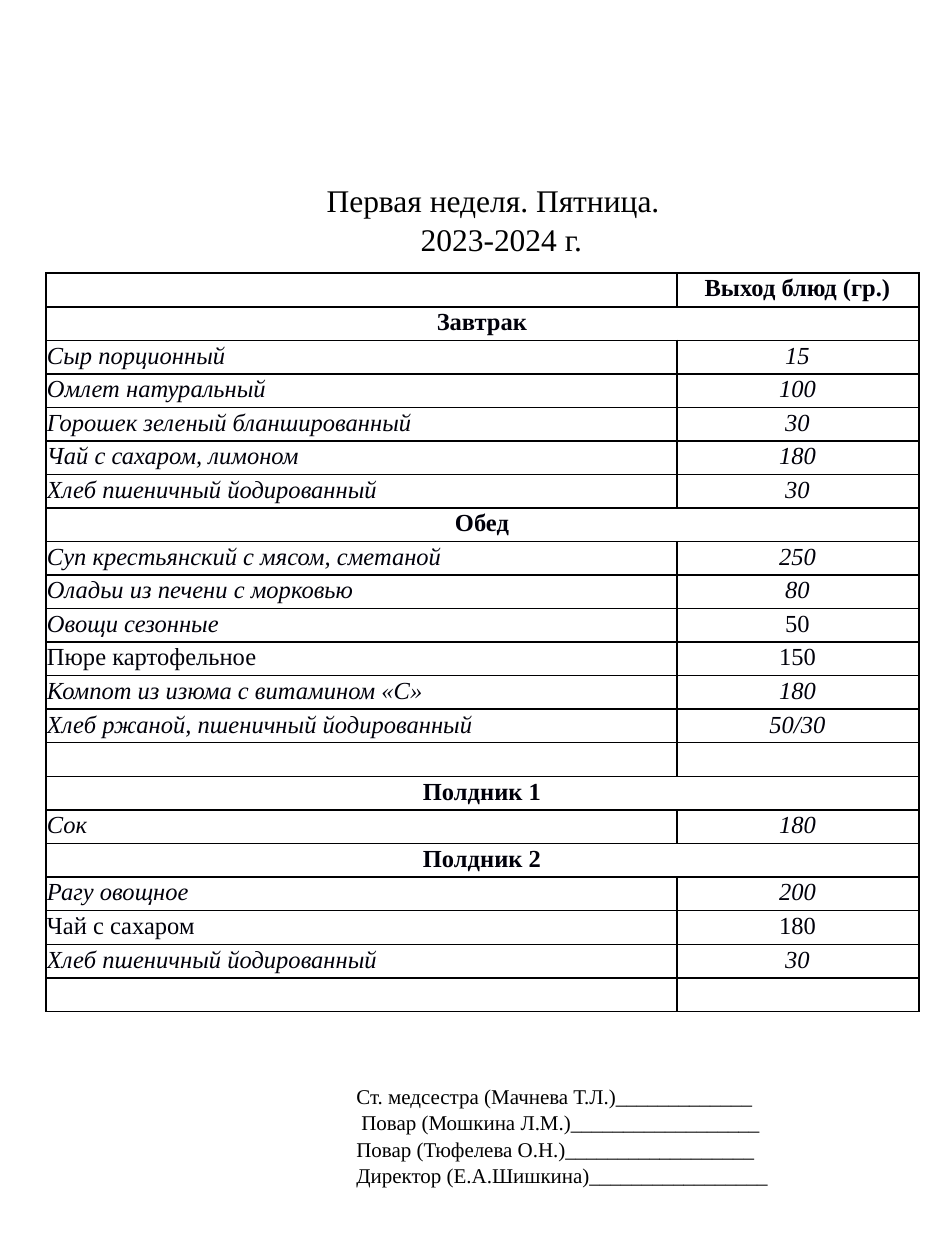
from lxml import etree
from pptx import Presentation
from pptx import util as u
from pptx.dml.color import RGBColor
from pptx.enum import text
from pptx.oxml.ns import qn

PX = 914400 // 126
FONT = "Times New Roman"
BLACK = RGBColor(0, 0, 0)
INK = RGBColor(0, 0, 0x0A)
EDGE = RGBColor(0, 0, 1)

# (text, indent in px)
TITLE = [("Первая неделя. Пятница.", 0), ("2023-2024 г.", 94)]
SIGNS = [
    ("Ст. медсестра (Мачнева Т.Л.)_____________", 0),
    ("Повар (Мошкина Л.М.)__________________", 5),
    ("Повар (Тюфелева О.Н.)__________________", 0),
    ("Директор (Е.А.Шишкина)_________________", 0),
]
HEAD = "Выход блюд (гр.)"
# A one-item row is a meal heading; an empty row is a blank line.
MENU = [
    ("Завтрак",),
    ("Сыр порционный", "15"),
    ("Омлет натуральный", "100"),
    ("Горошек зеленый бланшированный", "30"),
    ("Чай с сахаром, лимоном", "180"),
    ("Хлеб пшеничный йодированный", "30"),
    ("Обед",),
    ("Суп крестьянский с мясом, сметаной", "250"),
    ("Оладьи из печени с морковью", "80"),
    ("Овощи сезонные", "50"),
    ("Пюре картофельное", "150"),
    ("Компот из изюма с витамином «С»", "180"),
    ("Хлеб ржаной, пшеничный йодированный", "50/30"),
    (),
    ("Полдник 1",),
    ("Сок", "180"),
    ("Полдник 2",),
    ("Рагу овощное", "200"),
    ("Чай с сахаром", "180"),
    ("Хлеб пшеничный йодированный", "30"),
    (),
]
# Upright cells as (row, column) of the table
PLAIN = {(10, 1), (11, 0), (11, 1), (19, 0), (19, 1)}
COLS = (631, 242)
LEFT, TOP, TALL = 46, 273, 738


def px(n):
    return u.Emu(round(n * PX))


def add_run(para, words, size, color, bold=False, italic=False):
    run = para.add_run()
    run.text = words
    font = run.font
    font.name, font.size = FONT, u.Pt(size)
    font.bold, font.italic = bold, italic
    font.color.rgb = color


def fill_box(shape, box, lines, size, gap):
    shape.left, shape.top, shape.width, shape.height = map(px, box)
    frame = shape.text_frame
    frame.word_wrap = True
    frame.auto_size = text.MSO_AUTO_SIZE.NONE
    frame.vertical_anchor = text.MSO_ANCHOR.TOP
    for i, (words, indent) in enumerate(lines):
        para = frame.add_paragraph() if i else frame.paragraphs[0]
        para.alignment = text.PP_ALIGN.LEFT
        para.line_spacing = gap
        para.space_before = u.Pt(0)
        para._p.get_or_add_pPr().set("marL", str(px(indent)))
        add_run(para, words, size, BLACK)


def style_cell(cell):
    cell.margin_left = px(1)
    cell.margin_right = cell.margin_top = cell.margin_bottom = px(2)
    props = cell._tc.get_or_add_tcPr()
    for side in ("lnL", "lnR", "lnT", "lnB"):
        line = etree.SubElement(props, qn("a:" + side), w=str(u.Pt(1)))
        fill = etree.SubElement(line, qn("a:solidFill"))
        etree.SubElement(fill, qn("a:srgbClr"), val=str(EDGE))
    cell.fill.background()


def put(cell, words, center, bold=False, italic=False):
    para = cell.text_frame.paragraphs[0]
    para.alignment = text.PP_ALIGN.CENTER if center else text.PP_ALIGN.LEFT
    if words:
        add_run(para, words, 14, INK, bold, italic)
    else:
        etree.SubElement(para._p, qn("a:endParaRPr"), sz="1400")


def add_menu(slide):
    count = len(MENU) + 1
    frame = slide.shapes.add_table(count, 2, px(LEFT), px(TOP), px(sum(COLS)), px(TALL))
    table = frame.table
    table.first_row = table.horz_banding = False
    for col, wide in zip(table.columns, COLS):
        col.width = px(wide)
    for row in table.rows:
        row.height = px(TALL / count)
    for cell in table.iter_cells():
        style_cell(cell)
    put(table.cell(0, 0), "", False)
    put(table.cell(0, 1), HEAD, True, bold=True)
    for r, items in enumerate(MENU, 1):
        if len(items) == 1:
            table.cell(r, 0).merge(table.cell(r, 1))
            put(table.cell(r, 0), items[0], True, bold=True)
            put(table.cell(r, 1), "", True)
            continue
        for c, words in enumerate(items or ("", "")):
            put(table.cell(r, c), words, c == 1, italic=(r, c) not in PLAIN)


def main():
    deck = Presentation()
    deck.slide_width, deck.slide_height = px(945), px(1260)
    slide = deck.slides.add_slide(deck.slide_layouts[5])
    fill_box(slide.shapes.title, (314, 174, 466, 89), TITLE, 18, 1.02)
    add_menu(slide)
    signs = slide.shapes.add_textbox(0, 0, 0, 0)
    fill_box(signs, (344, 1076, 496, 152), SIGNS, 12, 1.05)
    deck.save("out.pptx")


if __name__ == "__main__":
    main()
